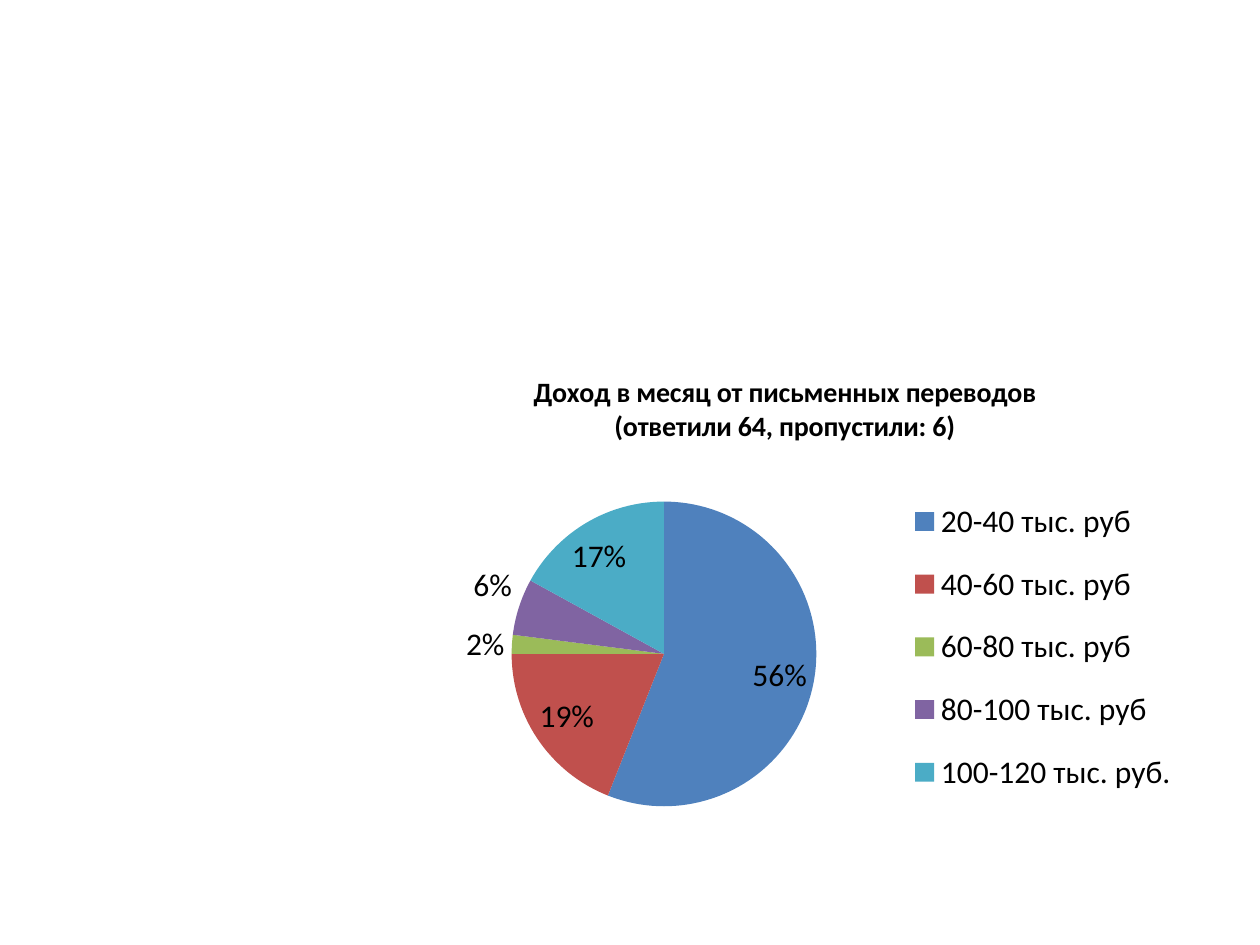
from dataclasses import dataclass

from lxml.etree import SubElement
from pptx import Presentation
from pptx.chart.data import CategoryChartData
from pptx.dml.color import RGBColor
from pptx.enum.chart import XL_CHART_TYPE, XL_LABEL_POSITION, XL_LEGEND_POSITION
from pptx.oxml.ns import qn
from pptx.util import Inches, Pt

TITLE = ["Доход в месяц от письменных переводов", "(ответили 64, пропустили: 6)"]
INCOMES = [
    ("20-40 тыс. руб", 56, "4F81BD"),
    ("40-60 тыс. руб", 19, "C0504D"),
    ("60-80 тыс. руб", 2, "9BBB59"),
    ("80-100 тыс. руб", 6, "8064A2"),
    ("100-120 тыс. руб.", 17, "4BACC6"),
]
CHART_BOX = (3.03, 2.81, 6.4, 3.78)
PIE_AREA = (0.16, 0.31, 0.38, 0.64)
LEGEND_AREA = (0.65, 0.26, 0.34, 0.71)


@dataclass
class Theme:
    font: str = "Calibri"
    text: str = "000000"
    body_size: int = 18
    title_size: int = 16


theme = Theme()


def style_font(font, size, bold=False):
    font.name = theme.font
    font.size = Pt(size)
    font.bold = bold
    font.color.rgb = RGBColor.from_string(theme.text)


def set_layout(parent, index, area, inner=False):
    for old in parent.findall(qn("c:layout")):
        parent.remove(old)
    layout = SubElement(parent, qn("c:layout"))
    parent.insert(index, layout)
    manual = SubElement(layout, qn("c:manualLayout"))
    settings = [("layoutTarget", "inner")] if inner else []
    settings += [("xMode", "edge"), ("yMode", "edge")]
    settings += zip("xywh", area)
    for tag, value in settings:
        SubElement(manual, qn(f"c:{tag}")).set("val", str(value))


def add_income_chart(s):
    data = CategoryChartData()
    data.categories = [name for name, _, _ in INCOMES]
    data.add_series("Series 1", [value for _, value, _ in INCOMES])
    box = [Inches(v) for v in CHART_BOX]
    chart = s.shapes.add_chart(XL_CHART_TYPE.PIE, *box, data).chart
    style_font(chart.font, theme.body_size)

    chart.has_title = True
    tf = chart.chart_title.text_frame
    tf.text = "\n".join(TITLE)
    for p in tf.paragraphs:
        for r in p.runs:
            style_font(r.font, theme.title_size, bold=True)

    chart.has_legend = True
    chart.legend.position = XL_LEGEND_POSITION.RIGHT
    chart.legend.include_in_layout = False
    style_font(chart.legend.font, theme.body_size)

    plot = chart.plots[0]
    plot.vary_by_categories = True
    for i, (_, _, color) in enumerate(INCOMES):
        fill = plot.series[0].points[i].format.fill
        fill.solid()
        fill.fore_color.rgb = RGBColor.from_string(color)

    plot.has_data_labels = True
    labels = plot.data_labels
    labels.show_value = False
    labels.show_percentage = True
    labels.number_format = "0%"
    labels.number_format_is_linked = False
    labels.position = XL_LABEL_POSITION.BEST_FIT
    style_font(labels.font, theme.body_size)

    plot_area = chart.element.find(".//" + qn("c:plotArea"))
    set_layout(plot_area, 0, PIE_AREA, inner=True)
    set_layout(chart.element.find(".//" + qn("c:legend")), 1, LEGEND_AREA)


def main():
    prs = Presentation()
    prs.slide_width, prs.slide_height = Inches(10), Inches(7.5)
    s = prs.slides.add_slide(prs.slide_layouts[6])
    add_income_chart(s)
    prs.save("out.pptx")


if __name__ == "__main__":
    main()
